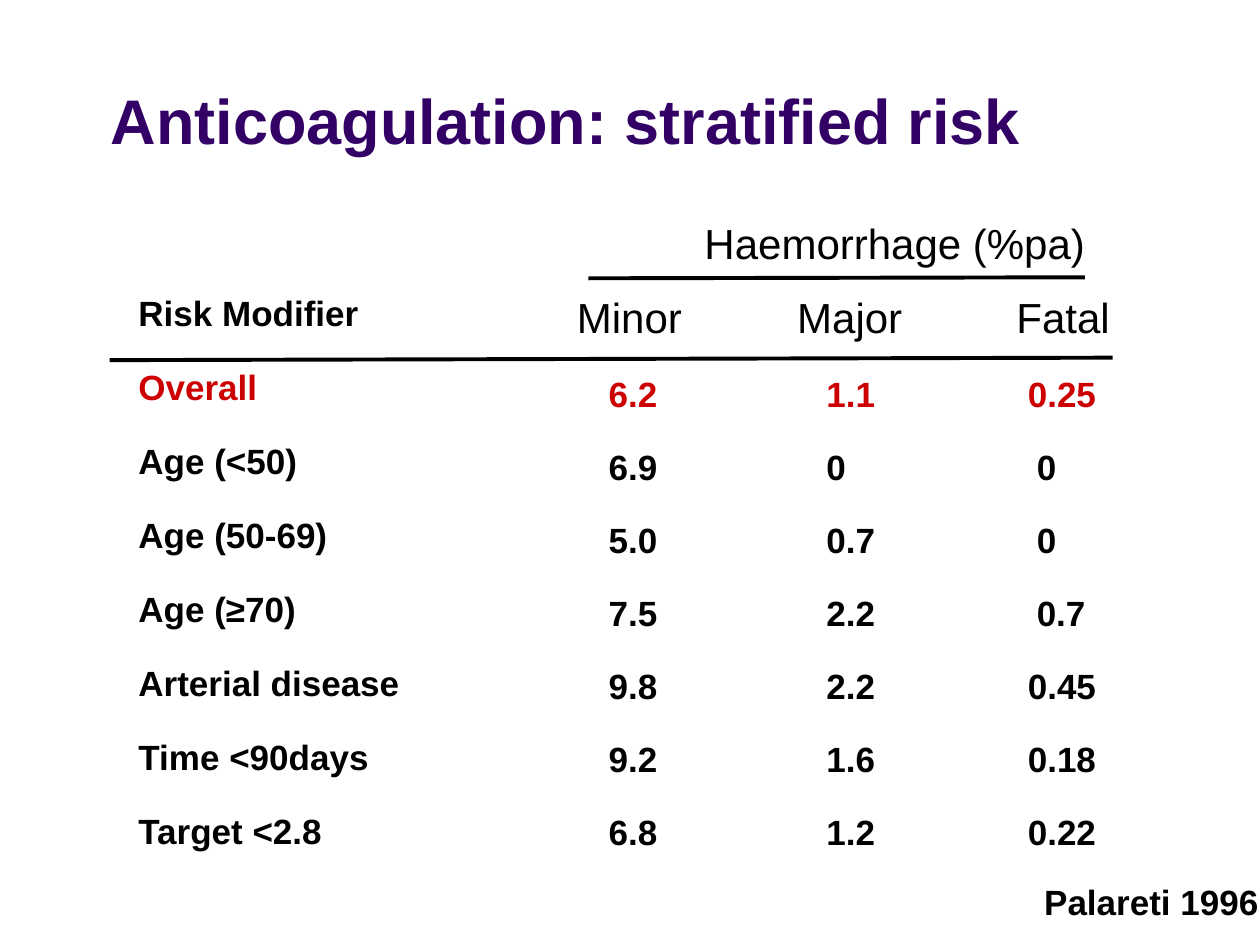
from dataclasses import dataclass

from lxml.etree import SubElement
from pptx import Presentation
from pptx.dml.color import RGBColor
from pptx.enum.text import MSO_ANCHOR, PP_ALIGN
from pptx.oxml.ns import qn
from pptx.util import Cm, Pt


@dataclass(frozen=True)
class Theme:
    font: str = "Arial"
    ink: RGBColor = RGBColor(0x00, 0x00, 0x00)
    accent: RGBColor = RGBColor(0xCC, 0x00, 0x00)
    title: RGBColor = RGBColor(0x33, 0x00, 0x66)
    big: int = 36
    head: int = 24
    body: int = 20
    rule: float = 2.25


@dataclass(frozen=True)
class Risk:
    label: str
    rates: tuple[str, str, str]
    strong: bool = False


@dataclass(frozen=True)
class Rule:
    x1: float
    y1: float
    x2: float
    y2: float


THEME = Theme()

# Table content and geometry, lengths in centimetres
HEADS = ("Minor", "Major", "Fatal")
RISKS = (
    Risk("Overall", ("6.2", "1.1", "0.25"), True),
    Risk("Age (<50)", ("6.9", "0", "0")),
    Risk("Age (50-69)", ("5.0", "0.7", "0")),
    Risk("Age (≥70)", ("7.5", "2.2", "0.7")),
    Risk("Arterial disease", ("9.8", "2.2", "0.45")),
    Risk("Time <90days", ("9.2", "1.6", "0.18")),
    Risk("Target <2.8", ("6.8", "1.2", "0.22")),
)
WIDTHS = (8.84, 4.44, 4.42, 2.44)
LEFT, TOP, ROW = 2.54, 4.33, 1.49
PAD, GAP = 0.25, 0.13
INDENTS = (0.89, 0.84, 0.48)
SHORT = 0.66  # indent of a short rate in the last column
RULES = (Rule(11.86, 5.61, 21.87, 5.59), Rule(2.21, 7.26, 22.43, 7.21))


def style(frame, text: str, size: int, color: RGBColor, bold: bool = True) -> None:
    frame.text = text
    for run in frame.paragraphs[0].runs:
        font = run.font
        font.name, font.size, font.bold = THEME.font, Pt(size), bold
        font.color.rgb = color


def fill(cell, text: str, size: int = THEME.body, color: RGBColor = THEME.ink,
         bold: bool = True, left: float = PAD, top: float = GAP) -> None:
    style(cell.text_frame, text, size, color, bold)
    cell.margin_left, cell.margin_top = Cm(left), Cm(top)


def draw_title(slide) -> None:
    title = slide.shapes.title
    title.left, title.top, title.width, title.height = Cm(1.98), Cm(1.52), Cm(19.02), Cm(1.8)
    frame = title.text_frame
    style(frame, "Anticoagulation: stratified risk", THEME.big, THEME.title)
    frame.word_wrap = False
    frame.vertical_anchor = MSO_ANCHOR.TOP
    frame.paragraphs[0].alignment = PP_ALIGN.LEFT


def draw_table(slide) -> None:
    count = len(RISKS) + 2
    table = slide.shapes.add_table(count, len(WIDTHS), Cm(LEFT), Cm(TOP),
                                   Cm(sum(WIDTHS)), Cm(ROW * count)).table
    table.first_row = table.horz_banding = False
    for col, width in zip(table.columns, WIDTHS):
        col.width = Cm(width)
    for row in table.rows:
        row.height = Cm(ROW)
    for cell in table.iter_cells():
        cell.fill.background()
        cell.margin_right = cell.margin_bottom = 0

    # Two header rows
    group = table.cell(0, 1)
    group.merge(table.cell(0, 3))
    fill(group, "Haemorrhage (%pa)", THEME.head, bold=False)
    group.margin_right = Cm(0.81)
    group.text_frame.paragraphs[0].alignment = PP_ALIGN.RIGHT
    fill(table.cell(1, 0), "Risk Modifier")
    for col, head in enumerate(HEADS, 1):
        fill(table.cell(1, col), head, THEME.head, bold=False)

    # Rates sit slightly below their labels at first, level at the end
    for i, risk in enumerate(RISKS):
        color = THEME.accent if risk.strong else THEME.ink
        fill(table.cell(i + 2, 0), risk.label, color=color)
        for col, (rate, left) in enumerate(zip(risk.rates, INDENTS), 1):
            if col == len(HEADS) and len(rate) < 4:
                left = SHORT
            fill(table.cell(i + 2, col), rate, color=color,
                 left=left, top=GAP + 0.14 - 0.02 * i)


def draw_rule(slide, rule: Rule) -> None:
    line = slide.shapes.add_connector(1, Cm(rule.x1), Cm(rule.y1), Cm(rule.x2), Cm(rule.y2))
    line.line.color.rgb = THEME.ink
    line.line.width = Pt(THEME.rule)
    SubElement(line._element.spPr, qn("a:effectLst"))


def draw_source(slide) -> None:
    box = slide.shapes.add_textbox(Cm(20.8), Cm(17.63), Cm(4.85), Cm(1.12))
    style(box.text_frame, "Palareti 1996", THEME.body, THEME.ink)
    box.text_frame.word_wrap = False


def main() -> None:
    deck = Presentation()
    deck.slide_width, deck.slide_height = Cm(25.4), Cm(19.05)
    slide = deck.slides.add_slide(deck.slide_layouts[5])
    draw_title(slide)
    draw_table(slide)
    for rule in RULES:
        draw_rule(slide, rule)
    draw_source(slide)
    deck.save("out.pptx")


if __name__ == "__main__":
    main()
